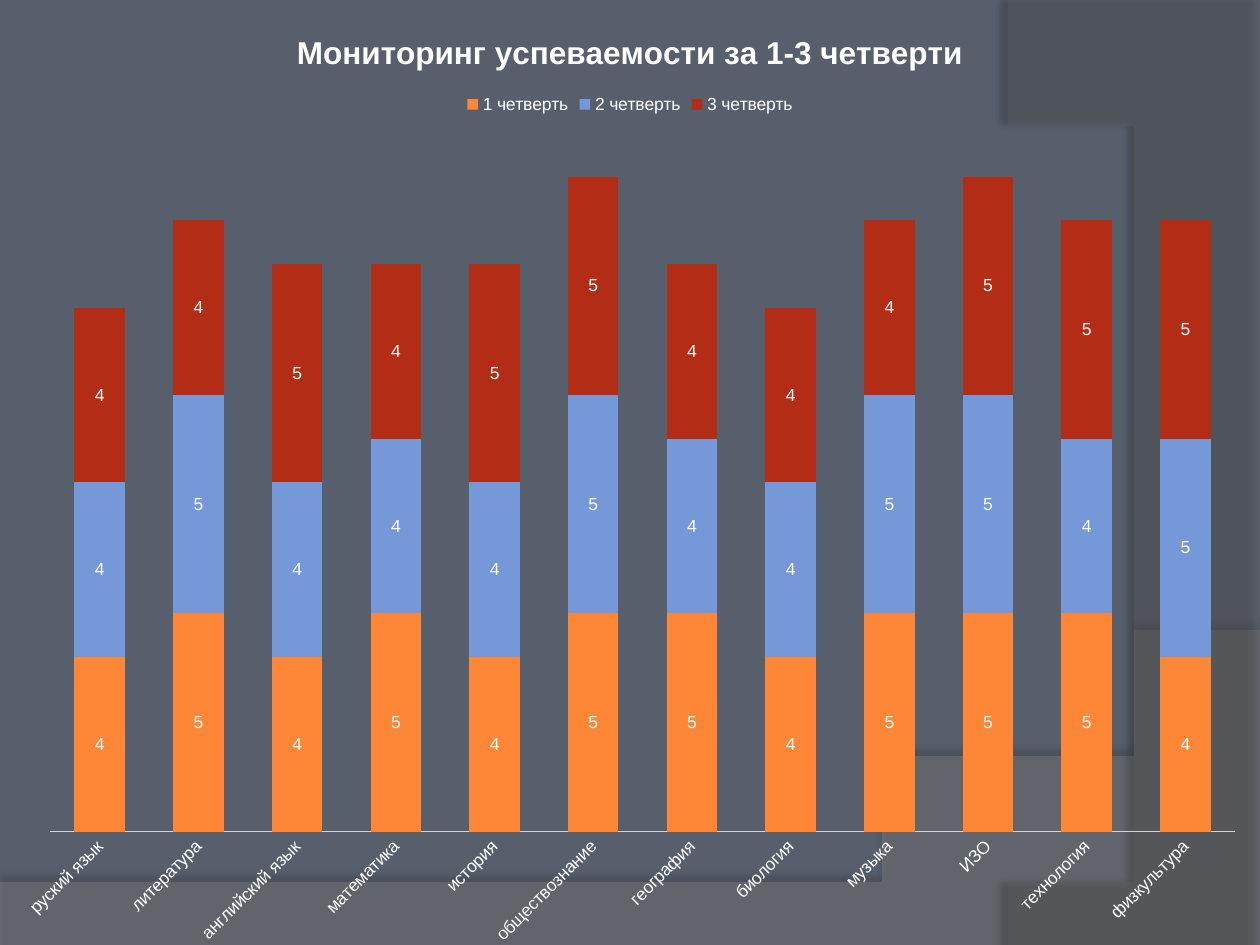
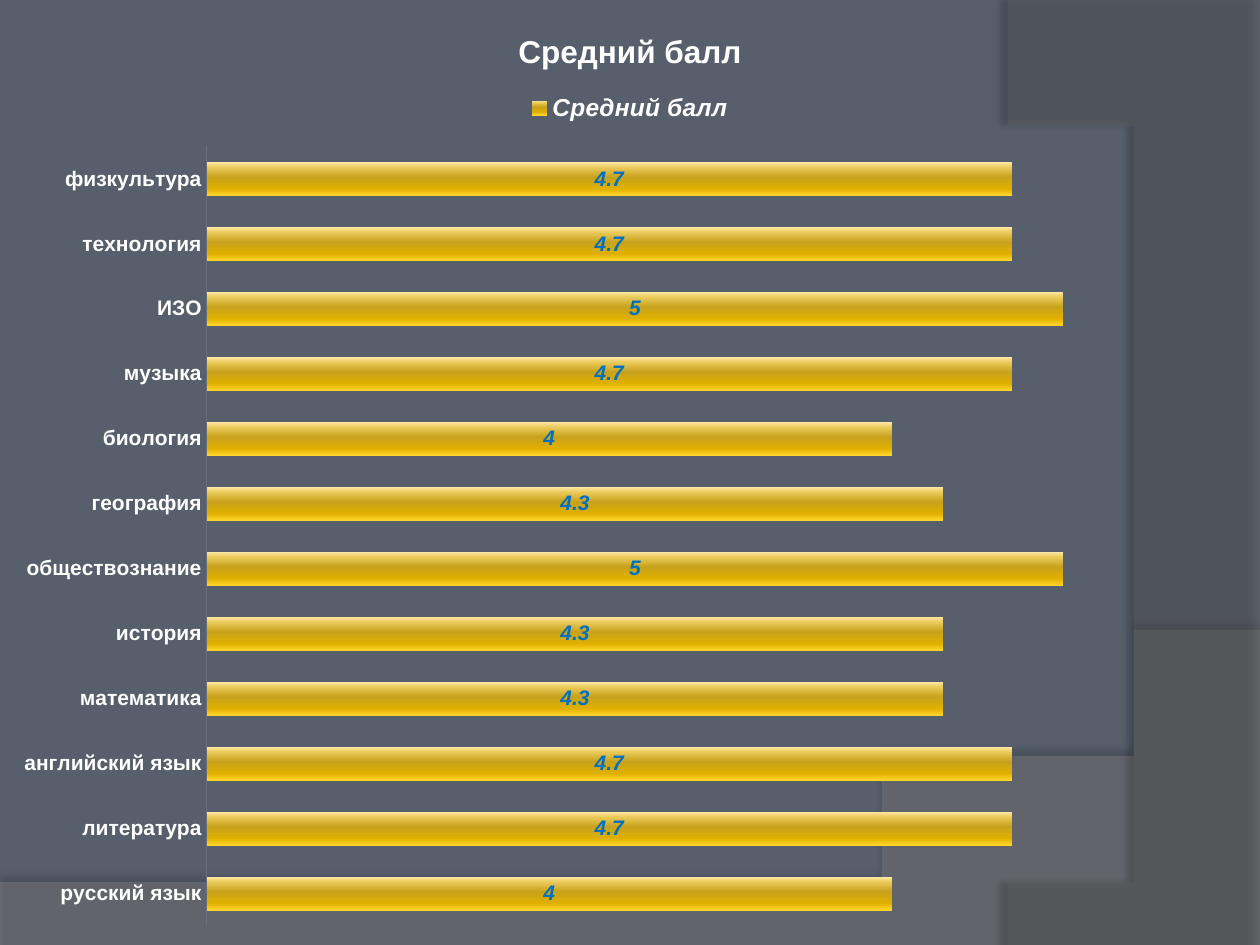
"""Two slides of school marks: quarterly monitoring and average mark per subject."""
from dataclasses import dataclass

from lxml import etree
from pptx import Presentation
from pptx import util as u
from pptx.chart.data import CategoryChartData
from pptx.dml.color import RGBColor
from pptx.enum import chart as kinds
from pptx.oxml.ns import qn


@dataclass(frozen=True)
class Theme:
    font: str = "Arial"
    background: str = "575F6D"
    text: str = "FFFFFF"
    title_size: int = 18
    base_size: int = 10
    quarters: tuple = ("FE8637", "7598D9", "B32C16")
    gold: tuple = ((0, "FFE9A8"), (15, "EBCB5C"), (45, "C8A21C"), (80, "E0B000"), (100, "FFD428"))


theme = Theme()


def add_band(slide, start, lines, curve, fill, opacity, shadow_opacity, distance, angle):
    """Draw a translucent outline closed by a sampled Bezier curve."""
    first, second, third, last = curve
    points = list(lines)
    for step in range(41):
        t = step / 40
        points.append(tuple(
            (1 - t) ** 3 * a + 3 * (1 - t) ** 2 * t * b + 3 * (1 - t) * t ** 2 * c + t ** 3 * d
            for a, b, c, d in zip(first, second, third, last)))
    builder = slide.shapes.build_freeform(*start, scale=u.Inches(1))
    builder.add_line_segments(points, close=True)
    band = builder.convert_to_shape()
    band.fill.solid()
    band.fill.fore_color.rgb = RGBColor.from_string(fill)
    band.line.fill.background()
    color = band.fill._xPr.find(".//" + qn("a:srgbClr"))
    etree.SubElement(color, qn("a:alpha"), val=str(opacity * 1000))
    band.shadow.inherit = False
    effects = band._element.spPr.find(qn("a:effectLst"))
    shadow = etree.SubElement(effects, qn("a:outerShdw"), blurRad=str(u.Pt(4)),
                              dist=str(u.Pt(distance)), dir=str(angle * 60000),
                              algn="ctr", rotWithShape="0")
    tint = etree.SubElement(shadow, qn("a:srgbClr"), val="000000")
    etree.SubElement(tint, qn("a:alpha"), val=str(shadow_opacity * 1000))


def style_font(font, size, color=theme.text, bold=False, italic=False):
    """Apply the deck typeface with the given emphasis."""
    font.name, font.size, font.bold, font.italic = theme.font, u.Pt(size), bold, italic
    font.color.rgb = RGBColor.from_string(color)


subjects = ["литература", "английский язык", "математика", "история", "обществознание",
            "география", "биология", "музыка", "ИЗО", "технология", "физкультура"]
charts = [
    dict(title="Мониторинг успеваемости за 1-3 четверти",
         kind=kinds.XL_CHART_TYPE.COLUMN_STACKED, height=7.66, maximum=16,
         categories=["руский язык"] + subjects,
         series={"1 четверть": (4, 5, 4, 5, 4, 5, 5, 4, 5, 5, 5, 4),
                 "2 четверть": (4, 5, 4, 4, 4, 5, 4, 4, 5, 5, 4, 5),
                 "3 четверть": (4, 4, 5, 4, 5, 5, 4, 4, 4, 5, 5, 5)},
         axis=dict(size=10), legend=dict(size=10), labels=dict(size=10),
         axis_line="D0D3D8", rotation=-45, gradient=False,
         plot=dict(x=0.04, y=0.138, w=0.94, h=0.724)),
    dict(title="Средний балл",
         kind=kinds.XL_CHART_TYPE.BAR_STACKED, height=7.5, maximum=6,
         categories=["русский язык"] + subjects,
         series={"Средний балл": (4, 4.7, 4.7, 4.3, 4.3, 5, 4.3, 4, 4.7, 5, 4.7, 4.7)},
         axis=dict(size=12, bold=True), legend=dict(size=14, bold=True, italic=True),
         labels=dict(size=12, color="0070C0", bold=True, italic=True),
         axis_line="69707D", rotation=0, gradient=True,
         plot=dict(x=0.164, y=0.155, w=0.816, h=0.825)),
]

deck = Presentation()
deck.slide_width, deck.slide_height = u.Inches(10), u.Inches(7.5)
backdrop = deck.slide_master.background.fill
backdrop.solid()
backdrop.fore_color.rgb = RGBColor.from_string(theme.background)

for entry in charts:
    slide = deck.slides.add_slide(deck.slide_layouts[6])
    add_band(slide, (0, 7.05), [(0, 7.51), (10, 7.51)],
             [(10, 5.2), (5.59, 7.29), (3.91, 7.19), (0, 7.05)], "7F7F7F", 45, 35, 3.5, 270)
    add_band(slide, (10, 0), [(10, 7.5)],
             [(8.21, 7.5), (9.35, 6.19), (10.18, 3), (8, 0)], "5E5E5E", 40, 45, 4, 180)

    data = CategoryChartData()
    data.categories = entry["categories"]
    for name, values in entry["series"].items():
        data.add_series(name, values)
    chart = slide.shapes.add_chart(entry["kind"], 0, 0, u.Inches(10),
                                   u.Inches(entry["height"]), data).chart
    style_font(chart.font, theme.base_size)
    chart.has_title = True
    chart.chart_title.include_in_layout = False
    chart.chart_title.text_frame.text = entry["title"]
    style_font(chart.chart_title.text_frame.paragraphs[0].runs[0].font,
               theme.title_size, bold=True)
    chart.has_legend = True
    chart.legend.position = kinds.XL_LEGEND_POSITION.TOP
    chart.legend.include_in_layout = False
    style_font(chart.legend.font, **entry["legend"])

    axis = chart.category_axis
    axis.major_tick_mark = kinds.XL_TICK_MARK.NONE
    axis.format.line.color.rgb = RGBColor.from_string(entry["axis_line"])
    axis.format.line.width = u.Pt(0.75)
    style_font(axis.tick_labels.font, **entry["axis"])
    axis._element.find(".//" + qn("a:bodyPr")).set("rot", str(entry["rotation"] * 60000))
    scale = chart.value_axis
    scale.minimum_scale, scale.maximum_scale = 0, entry["maximum"]
    scale.has_major_gridlines = False
    scale.visible = False

    plot = chart.plots[0]
    plot.gap_width, plot.overlap, plot.vary_by_categories = 95, 100, False
    plot.has_data_labels = True
    plot.data_labels.show_value = True
    plot.data_labels.position = kinds.XL_LABEL_POSITION.CENTER
    style_font(plot.data_labels.font, **entry["labels"])
    for series, color in zip(plot.series, theme.quarters):
        fill = series.format.fill
        if entry["gradient"]:
            fill.gradient()
            fill.gradient_angle = 270
            stops = series._element.find(".//" + qn("a:gsLst"))
            stops[:] = []
            for place, shade in theme.gold:
                stop = etree.SubElement(stops, qn("a:gs"), pos=str(place * 1000))
                etree.SubElement(stop, qn("a:srgbClr"), val=shade)
        else:
            fill.solid()
            fill.fore_color.rgb = RGBColor.from_string(color)

    layout = etree.Element(qn("c:layout"))
    manual = etree.SubElement(layout, qn("c:manualLayout"))
    settings = dict(layoutTarget="inner", xMode="edge", yMode="edge", **entry["plot"])
    for tag, value in settings.items():
        etree.SubElement(manual, qn("c:" + tag), val=str(value))
    chart._chartSpace.find(".//" + qn("c:plotArea")).insert(0, layout)

deck.save("out.pptx")
